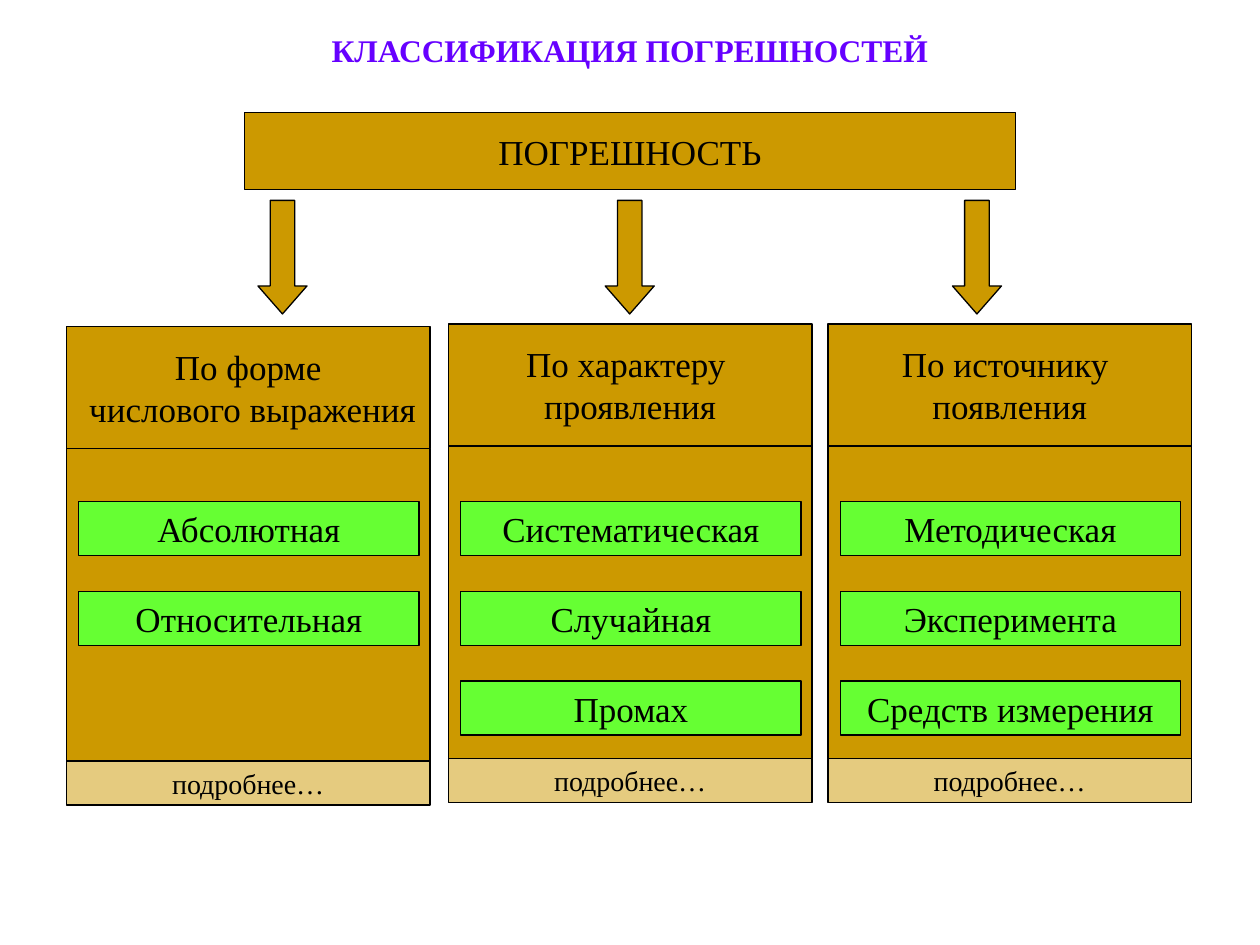
from lxml import etree
from pptx import Presentation
from pptx.dml.color import RGBColor
from pptx.enum.shapes import MSO_SHAPE
from pptx.enum.text import MSO_ANCHOR, PP_ALIGN
from pptx.oxml.ns import qn
from pptx.util import Cm, Pt

RECTANGLE = MSO_SHAPE.RECTANGLE
DOWN_ARROW = MSO_SHAPE.DOWN_ARROW
MIDDLE = MSO_ANCHOR.MIDDLE
CENTER = PP_ALIGN.CENTER

FONT = "Times New Roman"
COLORS = {
    "gold": "CC9900",
    "green": "66FF33",
    "black": "000000",
    "violet": "6600FF",
}
COLUMN_WIDTH = 7.33
HEADER_HEIGHT = 2.46
BODY_HEIGHT = 6.3
ITEM_STEP = 1.81
COLUMNS = [
    (1.34, 6.58, ["По форме", " числового выражения"],
     ["Абсолютная", "Относительная"]),
    (9.04, 6.53, ["По характеру ", "проявления"],
     ["Систематическая", "Случайная", "Промах"]),
    (16.69, 6.53, ["По источнику ", "появления"],
     ["Методическая", "Эксперимента", "Средств измерения"]),
]


def color(name):
    """Return the named palette colour."""
    return RGBColor.from_string(COLORS[name])


def write_text(shape, lines, size=20, color_name="black", bold=False, wrap=False):
    """Write centred lines of text into a shape."""
    frame = shape.text_frame
    frame.word_wrap = wrap
    frame.vertical_anchor = MIDDLE
    frame.text = "\n".join(lines)
    for paragraph in frame.paragraphs:
        paragraph.alignment = CENTER
        font = paragraph.runs[0].font
        font.name = FONT
        font.size = Pt(size)
        font.bold = bold
        font.color.rgb = color(color_name)


def add_block(slide, left, top, width, height, fill="gold", kind=RECTANGLE):
    """Add a filled shape with a thin black outline, placed in centimetres."""
    shape = slide.shapes.add_shape(kind, Cm(left), Cm(top), Cm(width), Cm(height))
    shape.shadow.inherit = False
    shape.fill.solid()
    shape.fill.fore_color.rgb = color(fill)
    shape.line.color.rgb = color("black")
    shape.line.width = Pt(0.75)
    return shape


def set_opacity(shape, percent):
    """Make the solid fill of a shape partly transparent."""
    fill_color = shape.fill._xPr.find(qn("a:solidFill"))[0]
    etree.SubElement(fill_color, qn("a:alpha"), val=str(percent * 1000))


def add_title(slide, text):
    """Add the slide title."""
    title = slide.shapes.add_textbox(Cm(1.27), Cm(0), Cm(22.86), Cm(2))
    write_text(title, [text], size=18, color_name="violet", bold=True, wrap=True)


def add_arrow(slide, left):
    """Add a down arrow from the root block to a column."""
    arrow = add_block(slide, left, 4.04, 0.99, 2.29, kind=DOWN_ARROW)
    arrow.adjustments[1] = 0.57


def add_column(slide, left, top, heading, items):
    """Add a column with its heading, items and footer."""
    body_top = top + HEADER_HEIGHT
    add_block(slide, left, body_top, COLUMN_WIDTH, BODY_HEIGHT)
    header = add_block(slide, left, top, COLUMN_WIDTH, HEADER_HEIGHT)
    write_text(header, heading)
    for index, text in enumerate(items):
        item_top = 10.11 + index * ITEM_STEP
        item = add_block(slide, left + 0.25, item_top, 6.86, 1.09, fill="green")
        write_text(item, [text])
    footer = add_block(slide, left, body_top + BODY_HEIGHT, COLUMN_WIDTH, 0.89)
    set_opacity(footer, 50)
    write_text(footer, ["подробнее…"], size=16)


def main():
    """Build the classification slide and save it."""
    presentation = Presentation()
    presentation.slide_width = Cm(25.4)
    presentation.slide_height = Cm(19.05)
    slide = presentation.slides.add_slide(presentation.slide_layouts[6])
    add_title(slide, "КЛАССИФИКАЦИЯ ПОГРЕШНОСТЕЙ")
    root = add_block(slide, 4.93, 2.27, 15.54, 1.55)
    write_text(root, ["ПОГРЕШНОСТЬ"])
    for index, column in enumerate(COLUMNS):
        add_arrow(slide, 5.2 + 7 * index)
        add_column(slide, *column)
    presentation.save("out.pptx")


if __name__ == "__main__":
    main()
